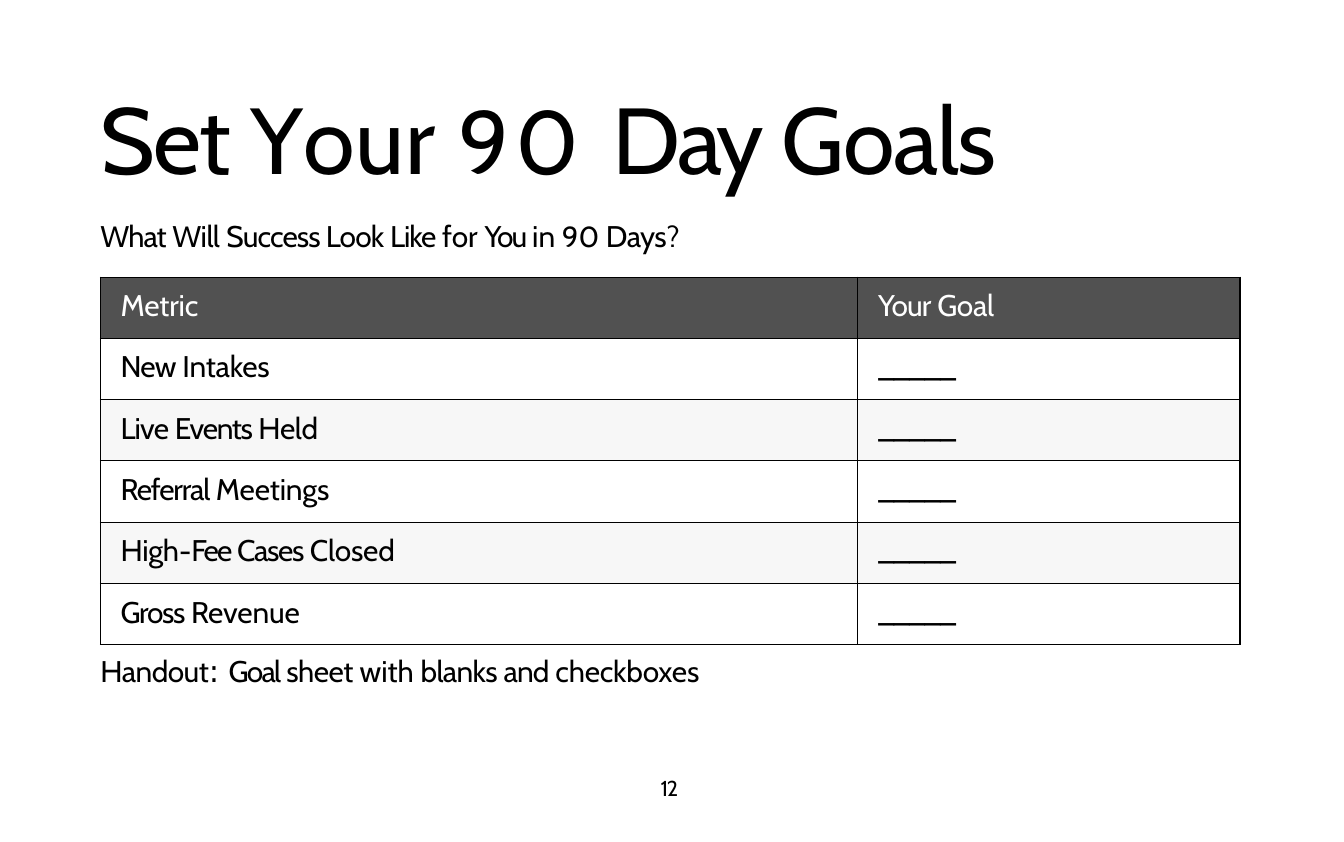
from lxml import etree
from pptx import Presentation
from pptx.dml.color import RGBColor
from pptx.oxml.ns import qn
from pptx.util import Inches, Pt

COLORS = {"ink": "000000", "paper": "FFFFFF", "header": "333333"}
FONT = "Cabin"
BODY_SIZE, SMALL_SIZE = 18, 17.5
LEFT = 0.83
TABLE_LEFT, TABLE_TOP, TABLE_HEIGHT = 0.84, 2.32, 3.08
COLUMN_WIDTHS = [6.34, 3.2]
CELL_INDENT, CELL_TOP = 0.17, 0.09

# Each run is (text, letter spacing in points[, size[, font]])
BLANK = [("_____", -0.6, SMALL_SIZE)]
GOAL_ROWS = [
    ([("Metric", -0.1)], [("Your ", -0.5), ("Goal", -0.2)]),
    ([("New ", -0.5), ("Intakes", -0.1)], BLANK),
    ([("Live ", -0.5), ("Events ", -0.8), ("Held", -0.2)], BLANK),
    ([("Referral ", -0.7), ("Meetings", -0.1)], BLANK),
    ([("High", -0.2), ("-", -0.2, SMALL_SIZE), ("Fee ", -1.2),
      ("Cases ", -0.8), ("Closed", -0.1)], BLANK),
    ([("Gross ", -0.8), ("Revenue", -0.1)], BLANK),
]

# (left, top, width, height), top inset, default size, runs
TEXT_LINES = [
    ((LEFT, 0.67, 7.74, 0.97), 0.01, 56.5, [
        ("Set ", -1.1), ("Y", -6.3), ("o", 0.3), ("u", 0.4), ("r ", 0.5),
        ("90 ", 3.9, 54), ("Day ", -2), ("Goals", -0.8)]),
    ((LEFT, 1.81, 5.18, 0.33), 0.01, BODY_SIZE, [
        ("What ", -0.6), ("Will ", -0.3), ("Success Look ", -0.5),
        ("Like ", -0.6), ("for ", 0), ("You ", -1.1), ("in ", 0),
        ("90 ", 0, SMALL_SIZE), ("Days", -0.3), ("?", -0.3, SMALL_SIZE)]),
    ((LEFT, 5.44, 5.29, 0.34), 0.02, BODY_SIZE, [
        ("Handout", -0.3), (": ", -0.3, 18.5, "DejaVu Sans"), ("Goal ", -1),
        ("sheet ", -0.3), ("with ", 0), ("blanks", -0.4), (" and ", -0.5),
        ("checkboxes", -0.1)]),
    ((5.52, 6.49, 0.2, 0.21), 0, 13, [("12", -0.8)]),
]


def write_runs(paragraph, runs, default_size, color):
    for text, spacing, *style in runs:
        run = paragraph.add_run()
        run.text = text
        run.font.size = Pt(style[0] if style else default_size)
        run.font.name = style[1] if len(style) > 1 else FONT
        run.font.color.rgb = RGBColor.from_string(COLORS[color])
        run._r.get_or_add_rPr().set("spc", str(round(spacing * 100)))


def style_cell(cell, border_widths, fill, opacity):
    """Draw the four borders, then a fill with opacity in percent."""
    properties = cell._tc.get_or_add_tcPr()
    for side, width in border_widths.items():
        line = etree.SubElement(properties, qn(f"a:ln{side}"), w=str(Pt(width)))
        solid = etree.SubElement(line, qn("a:solidFill"))
        etree.SubElement(solid, qn("a:srgbClr"), val=COLORS["ink"])
    if not opacity:
        cell.fill.background()
        return
    cell.fill.solid()
    cell.fill.fore_color.rgb = RGBColor.from_string(COLORS[fill])
    shade = properties.find(qn("a:solidFill")).find(qn("a:srgbClr"))
    etree.SubElement(shade, qn("a:alpha"), val=str(opacity * 1000))


prs = Presentation()
prs.slide_width, prs.slide_height = Inches(11.25), Inches(7.05)
slide = prs.slides.add_slide(prs.slide_layouts[6])
slide.background.fill.solid()
slide.background.fill.fore_color.rgb = RGBColor.from_string(COLORS["paper"])

for place, top_inset, size, runs in TEXT_LINES:
    frame = slide.shapes.add_textbox(*map(Inches, place)).text_frame
    frame.word_wrap = True
    frame.margin_left, frame.margin_top = Inches(0.01), Inches(top_inset)
    frame.margin_right = frame.margin_bottom = 0
    write_runs(frame.paragraphs[0], runs, size, "ink")

goals = slide.shapes.add_table(
    len(GOAL_ROWS), len(COLUMN_WIDTHS), Inches(TABLE_LEFT), Inches(TABLE_TOP),
    Inches(sum(COLUMN_WIDTHS)), Inches(TABLE_HEIGHT)).table
goals.first_row = goals.horz_banding = False
for column, width in zip(goals.columns, COLUMN_WIDTHS):
    column.width = Inches(width)

for row, cell_runs in enumerate(GOAL_ROWS):
    is_header = row == 0
    if is_header:
        fill, opacity, text_color = "header", 85, "paper"
    else:
        fill, opacity, text_color = "ink", 0 if row % 2 else 3, "ink"
    for col, runs in enumerate(cell_runs):
        cell = goals.cell(row, col)
        cell.margin_left, cell.margin_top = Inches(CELL_INDENT), Inches(CELL_TOP)
        cell.margin_right = cell.margin_bottom = 0
        write_runs(cell.text_frame.paragraphs[0], runs, BODY_SIZE, text_color)
        is_last_column = col == len(COLUMN_WIDTHS) - 1
        borders = {"L": 0.75, "R": 1.5 if is_last_column else 0.75,
                   "T": 0.75, "B": 0.75}
        style_cell(cell, borders, fill, opacity)

prs.save("out.pptx")
